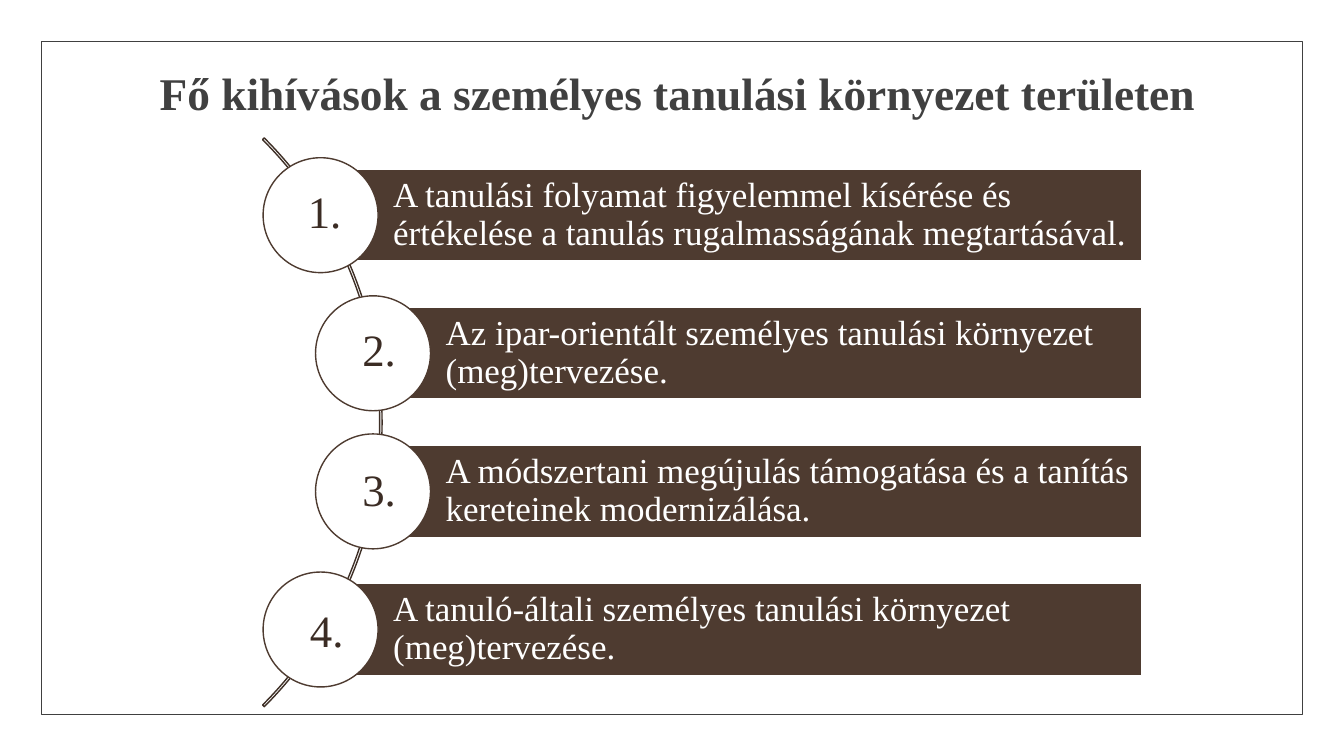
"""Build a slide listing four challenges of personal learning environments along an arc."""
from dataclasses import dataclass

from pptx import Presentation
from pptx.dml.color import RGBColor
from pptx.enum.shapes import MSO_SHAPE as Shape
from pptx.enum.text import MSO_ANCHOR as Anchor, PP_ALIGN as Align
from pptx.util import Inches, Pt

TITLE = "Fő kihívások a személyes tanulási környezet területen"
CHALLENGES = [
    ("1.", "A tanulási folyamat figyelemmel kísérése és értékelése a tanulás rugalmasságának megtartásával."),
    ("2.", "Az ipar-orientált személyes tanulási környezet (meg)tervezése."),
    ("3.", "A módszertani megújulás támogatása és a tanítás kereteinek modernizálása."),
    ("4.", "A tanuló-általi személyes tanulási környezet (meg)tervezése."),
]
NUMBER_CENTERS = [(3.22, 2.09), (3.76, 3.46), (3.76, 4.85), (3.24, 6.25)]
BAR_LEFTS = [3.18, 3.7, 3.7, 3.18]

SLIDE_WIDTH, SLIDE_HEIGHT = 13.33, 7.5
MARGIN = 0.41
BAR_TOP, BAR_PITCH, BAR_HEIGHT, BAR_RIGHT = 1.68, 1.37, 0.91, 11.32
CIRCLE = 1.14
NUMBER_SIZE = (0.65, 0.64)
ARC_BOX = (-4.19, 0.2, 7.98, 7.98)
ARC_ADJUSTMENTS = (189, 27, 0.003)


@dataclass(frozen=True)
class Theme:
    font: str = "Times New Roman"
    title: str = "404040"
    frame: str = "404040"
    brown: str = "4E3B30"
    arc: str = "3E2F26"
    number: str = "3B2C24"
    white: str = "FFFFFF"
    title_size: float = 32.4
    body_size: float = 25
    number_size: float = 32


THEME = Theme()


def add_outline(page, kind, area, line, width=1, fill=None):
    shape = page.shapes.add_shape(kind, *map(Inches, area))
    shape.shadow.inherit = False
    if fill:
        shape.fill.solid()
        shape.fill.fore_color.rgb = RGBColor.from_string(fill)
    else:
        shape.fill.background()
    shape.line.color.rgb = RGBColor.from_string(line)
    shape.line.width = Pt(width)
    return shape


def write(box, text, size, color, align, anchor=Anchor.MIDDLE, spacing=0.9, bold=False,
          wrap=True, insets=(0.1, 0.05, 0.1, 0.05)):
    frame = box.text_frame
    frame.text = text
    frame.word_wrap = wrap
    frame.vertical_anchor = anchor
    (frame.margin_left, frame.margin_top,
     frame.margin_right, frame.margin_bottom) = map(Inches, insets)
    para = frame.paragraphs[0]
    para.alignment = align
    para.line_spacing = spacing
    para.font.name = THEME.font
    para.font.size = Pt(size)
    para.font.bold = bold
    para.font.color.rgb = RGBColor.from_string(color)


def add_title(page):
    title = page.shapes.title
    title.left, title.top, title.width, title.height = map(Inches, (0.97, -0.1, 11.5, 1.45))
    write(title, TITLE, THEME.title_size, THEME.title, Align.CENTER,
          anchor=Anchor.BOTTOM, bold=True, insets=(0.1, 0.05, 0.1, 0.16))


def add_challenge(page, row, text):
    left, top = BAR_LEFTS[row], BAR_TOP + row * BAR_PITCH
    bar = add_outline(page, Shape.RECTANGLE, (left, top, BAR_RIGHT - left, BAR_HEIGHT),
                      THEME.white, fill=THEME.brown)
    write(bar, text, THEME.body_size, THEME.white, Align.LEFT, insets=(0.72, 0.07, 0.07, 0.07))
    circle_area = (left - CIRCLE / 2, top + (BAR_HEIGHT - CIRCLE) / 2, CIRCLE, CIRCLE)
    add_outline(page, Shape.OVAL, circle_area, THEME.brown, fill=THEME.white)


def add_number(page, number, center):
    corner = [middle - size / 2 for middle, size in zip(center, NUMBER_SIZE)]
    box = page.shapes.add_textbox(*map(Inches, (*corner, *NUMBER_SIZE)))
    write(box, number, THEME.number_size, THEME.number, Align.CENTER, spacing=1.0, wrap=False)


def main():
    deck = Presentation()
    deck.slide_width, deck.slide_height = Inches(SLIDE_WIDTH), Inches(SLIDE_HEIGHT)
    page = deck.slides.add_slide(deck.slide_layouts[5])
    frame_area = (MARGIN, MARGIN, SLIDE_WIDTH - 2 * MARGIN, SLIDE_HEIGHT - 2 * MARGIN)
    add_outline(page, Shape.RECTANGLE, frame_area, THEME.frame, width=0.5)
    add_title(page)
    arc = add_outline(page, Shape.BLOCK_ARC, ARC_BOX, THEME.arc)
    for index, value in enumerate(ARC_ADJUSTMENTS):
        arc.adjustments[index] = value
    for row, (number, text) in enumerate(CHALLENGES):
        add_challenge(page, row, text)
        add_number(page, number, NUMBER_CENTERS[row])
    deck.save("out.pptx")


if __name__ == "__main__":
    main()
